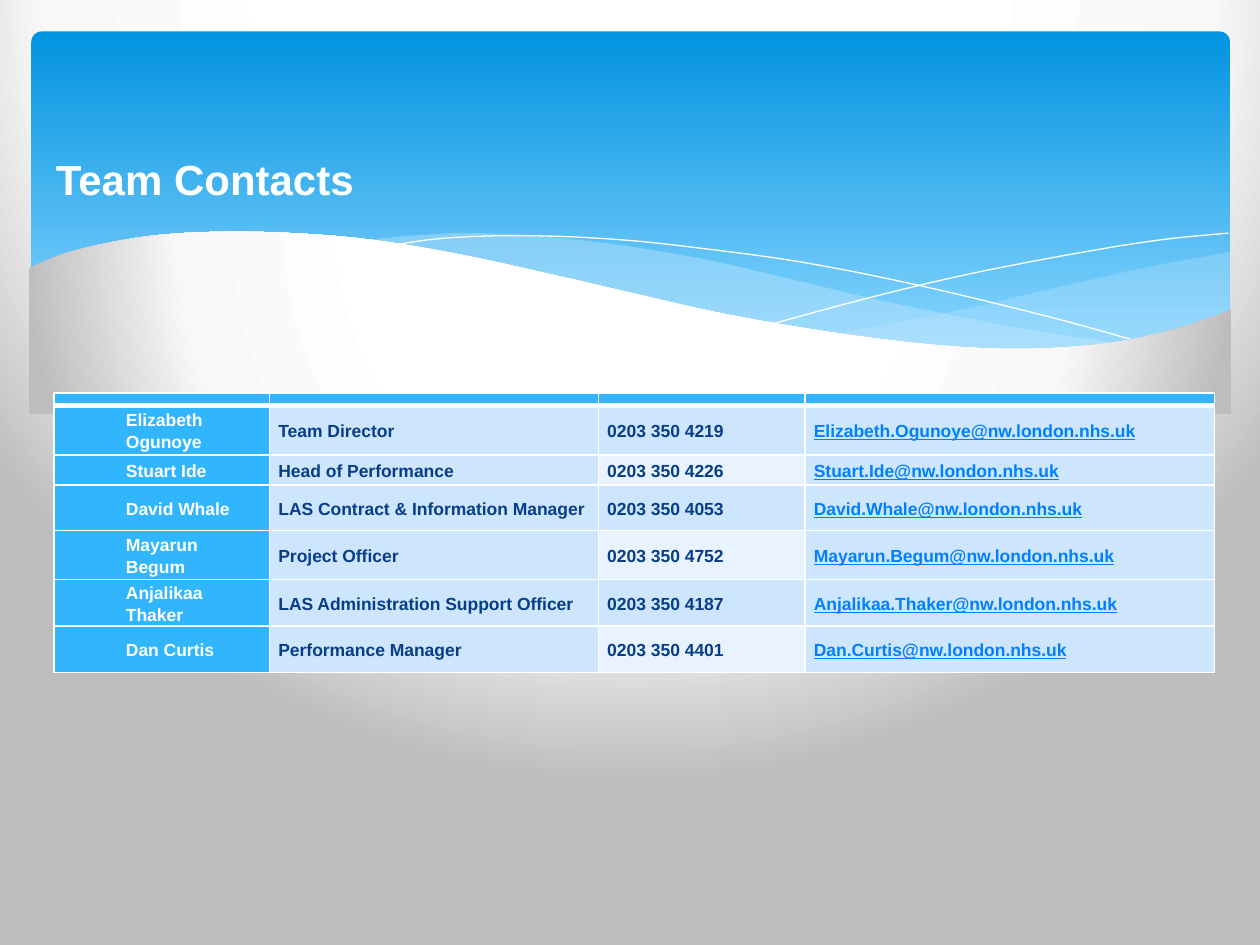
from lxml import etree
from pptx import Presentation
from pptx.dml.color import RGBColor
from pptx.enum.shapes import MSO_SHAPE
from pptx.enum.text import MSO_ANCHOR, PP_ALIGN
from pptx.oxml.ns import qn
from pptx.util import Inches, Pt

ROUNDED = MSO_SHAPE.ROUNDED_RECTANGLE
MIDDLE = MSO_ANCHOR.MIDDLE
CENTER = PP_ALIGN.CENTER
GRID_COLUMNS, GRID_ROWS = 100, 75
CELL = Inches(0.1)

WHITE, BLUE, NAVY, LINK = "FFFFFF", "31B6FD", "073E87", "0080FF"
PALE, PALER, MIST = "CEE5FE", "E8F3FF", "C6E7FC"
GLOW = [(40, WHITE), (74, "F8F8F8"), (100, "BDBDBD")]
SKY = [(0, "0293E0"), (90, "83D3FE")]

COLUMN_WIDTHS = [17.1, 26.1, 16.4, 32.5]
ROW_HEIGHTS = [1, 3.9, 2.4, 3.6, 3.9, 3.7, 3.7]
CONTACTS = [
    ("Elizabeth Ogunoye", "Team Director", "0203 350 4219", "Elizabeth.Ogunoye@nw.london.nhs.uk"),
    ("Stuart Ide", "Head of Performance", "0203 350 4226", "Stuart.Ide@nw.london.nhs.uk"),
    ("David Whale", "LAS Contract & Information Manager", "0203 350 4053", "David.Whale@nw.london.nhs.uk"),
    ("Mayarun Begum", "Project Officer", "0203 350 4752", "Mayarun.Begum@nw.london.nhs.uk"),
    ("Anjalikaa Thaker", "LAS Administration Support Officer", "0203 350 4187", "Anjalikaa.Thaker@nw.london.nhs.uk"),
    ("Dan Curtis", "Performance Manager", "0203 350 4401", "Dan.Curtis@nw.london.nhs.uk"),
]

RIGHT_SWELL_TOP = [(97.6, 20), (92.1, 21), (86.1, 22.3), (75.3, 24.8), (66.1, 26.5)]
RIGHT_SWELL_BASE = [(66.1, 26.5), (73.2, 27.4), (81.4, 27.8), (88.1, 27.3), (93.5, 26.2), (97.6, 24.7)]
LONG_SWELL_TOP = [(89.3, 27.3), (80.7, 26), (70.6, 24), (62.9, 22.2), (55.5, 20.5), (46.5, 19.1),
                  (38, 18.5), (32.8, 18.7), (28.6, 19.1)]
LONG_SWELL_BASE = [(28.6, 19.1), (36.2, 20.3), (44.9, 22.2), (56.6, 24.8), (66.5, 26.6),
                   (74.8, 27.6), (81.8, 27.8), (89.3, 27.3)]
FALLING_LINE = [(30.9, 19.5), (35.3, 18.9), (41.6, 18.7), (48.9, 19), (55.6, 19.7), (63.6, 20.8),
                (72.7, 22.6), (83.1, 25.1), (90.7, 27.2)]
RISING_LINE = [(61.3, 25.7), (69.5, 23.5), (77.6, 21.6), (86.6, 19.9), (92.4, 19), (97.5, 18.5)]
WAVE_CREST = [(97.7, 24.6), (93, 26.2), (87.5, 27.3), (80.9, 27.7), (74.4, 27.4), (66.8, 26.5),
              (57.9, 25), (50.3, 23.3), (44.7, 22), (36.5, 20.2), (29.2, 19), (23, 18.5),
              (17.7, 18.4), (13.2, 18.6), (9.5, 19.1), (5.9, 19.9), (3.6, 20.7), (2.3, 21.3)]
WAVE_FOOT = [(2.3, 32.9), (97.7, 32.9)]


def grid(*lengths):
    return [round(length * CELL) for length in lengths]


def color(value):
    return RGBColor.from_string(value)


def add_xml(parent, tag, **attributes):
    return etree.SubElement(parent, qn(tag), {key: str(value) for key, value in attributes.items()})


def paint_gradient(fill, element, stops, radial):
    fill.gradient()
    gradient = element.find(".//" + qn("a:gradFill"))
    for child in list(gradient):
        gradient.remove(child)
    stop_list = add_xml(gradient, "a:gsLst")
    for position, value in stops:
        stop = add_xml(stop_list, "a:gs", pos=position * 1000)
        add_xml(stop, "a:srgbClr", val=value)
    if radial:
        route = add_xml(gradient, "a:path", path="circle")
        add_xml(route, "a:fillToRect", l=20000, t=-40000, r=20000, b=140000)
    else:
        add_xml(gradient, "a:lin", ang=5400000, scaled=0)


def smooth_curve(knots, steps=6):
    padded = [knots[0], *knots, knots[-1]]
    curve = [knots[0]]
    for before, start, end, after in zip(padded, padded[1:], padded[2:], padded[3:]):
        for step in range(1, steps + 1):
            t = step / steps
            curve.append(tuple(
                (2 * b + (c - a) * t + (2 * a - 5 * b + 4 * c - d) * t ** 2
                 + (3 * b - a - 3 * c + d) * t ** 3) / 2
                for a, b, c, d in zip(before, start, end, after)))
    return curve


def add_outline(page, points, closed=True):
    corners = [grid(*point) for point in points]
    builder = page.shapes.build_freeform(*corners[0], scale=1.0)
    builder.add_line_segments(corners[1:], close=closed)
    shape = builder.convert_to_shape()
    shape.shadow.inherit = False
    return shape


def add_swell(page, edges, opacity):
    shape = add_outline(page, [point for edge in edges for point in smooth_curve(edge)])
    shape.line.fill.background()
    shape.fill.solid()
    shape.fill.fore_color.rgb = color(MIST)
    tint = shape.element.spPr.find(".//" + qn("a:srgbClr"))
    add_xml(tint, "a:alpha", val=opacity * 1000)


def add_thin_line(page, knots):
    shape = add_outline(page, smooth_curve(knots), closed=False)
    shape.fill.background()
    shape.line.color.rgb = color(WHITE)
    shape.line.width = Pt(0)


def add_banner(page):
    panel = page.shapes.add_shape(ROUNDED, *grid(2.5, 2.5, 95.1, 27))
    panel.adjustments[0] = 0.03
    panel.shadow.inherit = False
    panel.line.fill.background()
    paint_gradient(panel.fill, panel.element.spPr, SKY, radial=False)
    add_swell(page, [RIGHT_SWELL_TOP, RIGHT_SWELL_BASE], 29)
    add_swell(page, [LONG_SWELL_TOP, LONG_SWELL_BASE], 40)
    for knots in (FALLING_LINE, RISING_LINE):
        add_thin_line(page, knots)
    wave = add_outline(page, smooth_curve(WAVE_CREST) + WAVE_FOOT)
    wave.line.fill.background()
    paint_gradient(wave.fill, wave.element.spPr, GLOW, radial=True)


def write_text(para, text, size, value, underline=False):
    span = para.add_run()
    span.text = text
    formats = {"name": "Arial", "size": Pt(size), "bold": True, "underline": underline}
    for name, setting in formats.items():
        setattr(span.font, name, setting)
    span.font.color.rgb = color(value)


def style_cell(cell, value, top=1, bottom=1):
    formats = {"margin_left": Inches(0.07), "margin_right": Inches(0.07),
               "margin_top": 0, "margin_bottom": 0, "vertical_anchor": MIDDLE}
    for name, setting in formats.items():
        setattr(cell, name, setting)
    properties = cell._tc.get_or_add_tcPr()
    for side, width in zip("LRTB", (1, 1, top, bottom)):
        border = add_xml(properties, "a:ln" + side, w=Pt(width))
        add_xml(add_xml(border, "a:solidFill"), "a:srgbClr", val=WHITE)
    cell.fill.solid()
    cell.fill.fore_color.rgb = color(value)


def add_contacts(page):
    frame = page.shapes.add_table(len(ROW_HEIGHTS), len(COLUMN_WIDTHS),
                                  *grid(4.3, 31.2, sum(COLUMN_WIDTHS), sum(ROW_HEIGHTS)))
    table = frame.table
    for column, width in zip(table.columns, grid(*COLUMN_WIDTHS)):
        column.width = width
    for row, height in zip(table.rows, grid(*ROW_HEIGHTS)):
        row.height = height
    for cell in table.rows[0].cells:
        style_cell(cell, BLUE, bottom=3)
        add_xml(cell.text_frame.paragraphs[0]._p, "a:endParaRPr", sz=100)
    for number, contact in enumerate(CONTACTS, 1):
        phone_fill = PALE if number % 2 else PALER
        fills = (BLUE, PALE, phone_fill, PALE)
        inks = (WHITE, NAVY, NAVY, LINK)
        for cell, text, fill, ink in zip(table.rows[number].cells, contact, fills, inks):
            style_cell(cell, fill, top=3 if number == 1 else 1)
            para = cell.text_frame.paragraphs[0]
            para.line_spacing = 1.15
            write_text(para, text, 10, ink, underline=ink == LINK)
        name_para = table.cell(number, 0).text_frame.paragraphs[0]
        name_para._p.get_or_add_pPr().set("marL", str(Inches(0.5)))


def add_title(page):
    box = page.shapes.add_textbox(*grid(-7.5, 7.3, 47.5, 13.7))
    box.text_frame.word_wrap = True
    box.text_frame.vertical_anchor = MIDDLE
    para = box.text_frame.paragraphs[0]
    para.alignment = CENTER
    write_text(para, "Team Contacts", 24, WHITE)


def main():
    deck = Presentation()
    deck.slide_width, deck.slide_height = grid(GRID_COLUMNS, GRID_ROWS)
    page = deck.slides.add_slide(deck.slide_layouts[6])
    paint_gradient(page.background.fill, page.element, GLOW, radial=True)
    add_banner(page)
    add_contacts(page)
    add_title(page)
    deck.save("out.pptx")


if __name__ == "__main__":
    main()
